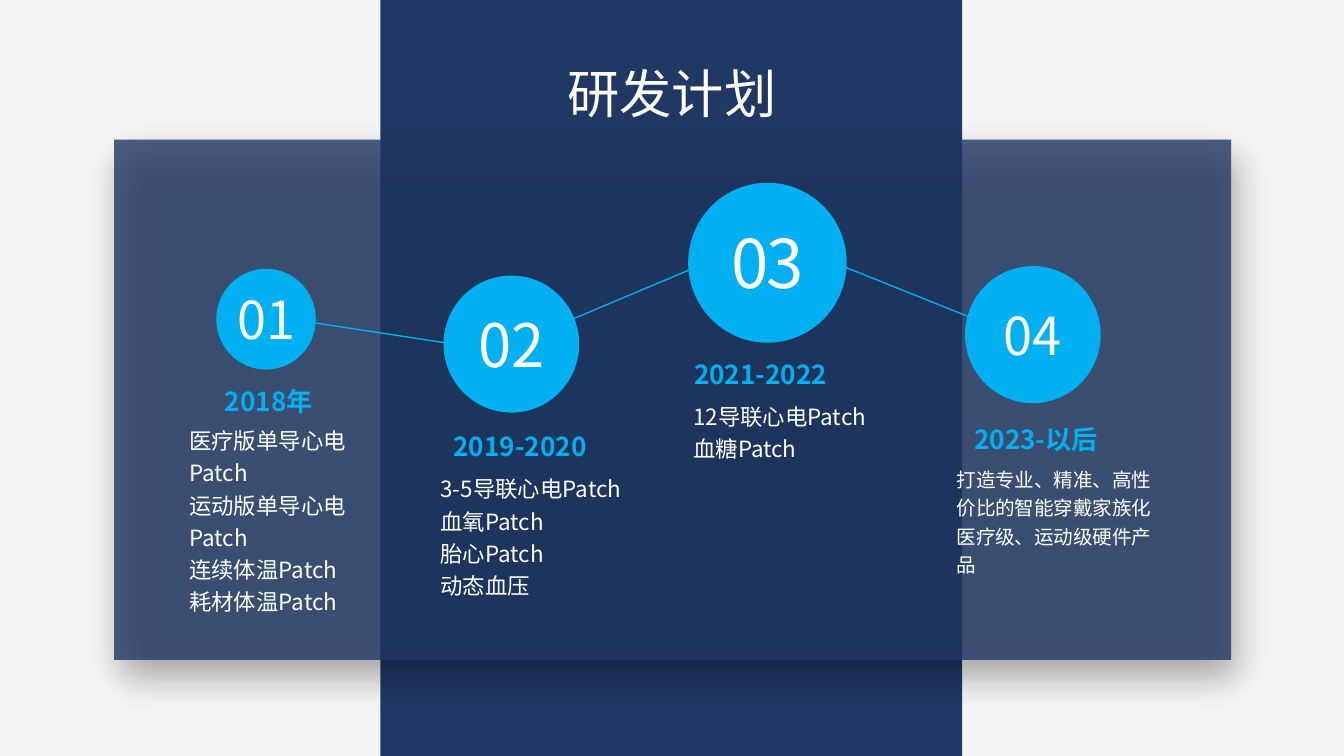
from dataclasses import dataclass
from itertools import pairwise

from lxml.etree import SubElement
from pptx import Presentation
from pptx.dml.color import RGBColor
from pptx.enum.shapes import MSO_CONNECTOR as Link, MSO_SHAPE as Kind
from pptx.enum.text import MSO_AUTO_SIZE as Fit, PP_ALIGN as Align
from pptx.oxml.ns import qn
from pptx.util import Inches, Pt

WIDE = 10
HIGH = WIDE * 9 / 16
FONT = "Noto Sans CJK SC"
HUES = {"page": "F5F5F5", "navy": "203864", "cyan": "00B0F0", "white": "FFFFFF"}


@dataclass
class Box:
    x: float
    y: float
    w: float
    h: float

    def dims(self) -> list:
        return [Inches(v) for v in (self.x, self.y, self.w, self.h)]


@dataclass
class Style:
    size: float
    hue: str = "white"
    bold: bool = False
    align: Align = Align.CENTER
    lead: float | None = None
    gap: float | None = None
    wrap: bool = True
    pad: float = 0.1


@dataclass
class Stop:
    num: str
    disc: Box
    area: tuple[float, float]
    size: float
    date: str
    head: tuple[float, float]
    body: Box
    lines: list[str]
    small: float = 12
    gap: float | None = None


STOPS = [
    Stop("01", Box(1.61, 2, 0.74, 0.75), (0.69, 0.57), 28, "2018年", (1.31, 2.82),
         Box(1.31, 3.09, 1.67, 1.53),
         ["医疗版单导心电Patch", "运动版单导心电Patch", "连续体温Patch", "耗材体温Patch"]),
    Stop("02", Box(3.3, 2.05, 1.01, 1.02), (0.96, 0.64), 32, "2019-2020", (3.18, 3.15),
         Box(3.18, 3.45, 1.67, 1.24),
         ["3-5导联心电Patch", "血氧Patch", "胎心Patch", "动态血压"]),
    Stop("03", Box(5.12, 1.36, 1.18, 1.19), (0.76, 0.71), 36, "2021-2022", (4.97, 2.62),
         Box(5.06, 2.91, 1.67, 0.57), ["12导联心电Patch", "血糖Patch"], gap=-1.1),
    Stop("04", Box(7.18, 1.98, 1.01, 1.02), (0.66, 0.57), 28, "2023-以后", (7.02, 3.1),
         Box(7.02, 3.4, 1.67, 0.93),
         ["打造专业、精准、高性价比的智能穿戴家族化医疗级、运动级硬件产品"], small=10.5),
]
NODES = [(1.87, 2.33), (3.7, 2.61), (5.72, 1.76), (7.69, 2.55)]


def tint(name: str) -> RGBColor:
    """Return the named colour."""
    return RGBColor.from_string(HUES[name])


def fade(node, part: int) -> None:
    """Set the opacity of a colour element in percent."""
    SubElement(node, qn("a:alpha"), val=str(part * 1000))


def shape(slide, kind: Kind, box: Box, hue: str):
    """Draw a flat filled shape."""
    item = slide.shapes.add_shape(kind, *box.dims())
    item.shadow.inherit = False
    item.fill.solid()
    item.fill.fore_color.rgb = tint(hue)
    item.line.fill.background()
    return item


def panel(slide, box: Box) -> None:
    """Draw the translucent panel with its soft shadow."""
    props = shape(slide, Kind.RECTANGLE, box, "navy")._element.spPr
    fade(props.find(".//" + qn("a:srgbClr")), 80)
    cast = SubElement(props.find(qn("a:effectLst")), qn("a:outerShdw"),
                      blurRad=str(Pt(20)), dist=str(Pt(10)), dir=str(70 * 60000),
                      algn="t", rotWithShape="0")
    fade(SubElement(cast, qn("a:srgbClr"), val="000000"), 40)


def link(slide, start: tuple, end: tuple) -> None:
    """Join two nodes with a thin line."""
    line = slide.shapes.add_connector(Link.STRAIGHT, *map(Inches, start + end))
    line.line.color.rgb = tint("cyan")
    line.line.width = Pt(0.75)
    SubElement(line._element.spPr, qn("a:effectLst"))


def write(slide, box: Box, lines: list[str], style: Style) -> None:
    """Add a text box with one run for each line."""
    frame = slide.shapes.add_textbox(*box.dims()).text_frame
    frame.word_wrap = style.wrap
    frame.auto_size = Fit.SHAPE_TO_FIT_TEXT
    frame.margin_left = frame.margin_right = Inches(style.pad)
    for i, text in enumerate(lines):
        para = frame.add_paragraph() if i else frame.paragraphs[0]
        para.alignment = style.align
        para.line_spacing = style.lead
        run = para.add_run()
        run.text = text
        font = run.font
        font.size, font.bold, font.name = Pt(style.size), style.bold, FONT
        font.color.rgb = tint(style.hue)
        props = run._r.get_or_add_rPr()
        SubElement(props, qn("a:ea"), typeface=FONT)
        if style.gap:
            props.set("spc", str(round(style.gap * 100)))


def number(slide, stop: Stop) -> None:
    """Draw a disc with its number centred on it."""
    disc, (w, h) = stop.disc, stop.area
    shape(slide, Kind.OVAL, disc, "cyan")
    box = Box(disc.x + (disc.w - w) / 2, disc.y + (disc.h - h) / 2, w, h)
    write(slide, box, [stop.num], Style(stop.size, gap=stop.gap, wrap=False))


def label(slide, stop: Stop) -> None:
    """Write the plans and the date of a stop."""
    write(slide, stop.body, stop.lines, Style(stop.small, align=Align.LEFT, lead=1.2))
    write(slide, Box(*stop.head, 1.38, 0.34), [stop.date], Style(14, "cyan", True))


def main() -> None:
    """Build the roadmap slide."""
    deck = Presentation()
    deck.slide_width, deck.slide_height = Inches(WIDE), Inches(HIGH)
    slide = deck.slides.add_slide(deck.slide_layouts[6])
    slide.background.fill.solid()
    slide.background.fill.fore_color.rgb = tint("page")
    shape(slide, Kind.RECTANGLE, Box(2.83, 0, 4.33, HIGH), "navy")
    panel(slide, Box(0.85, 1.04, 8.31, 3.87))
    for start, end in pairwise(NODES):
        link(slide, start, end)
    for stop in STOPS:
        number(slide, stop)
    write(slide, Box(2.43, 0.41, 5.14, 0.55), ["研发计划"], Style(28, pad=0))
    for stop in STOPS:
        label(slide, stop)
    deck.save("out.pptx")


if __name__ == "__main__":
    main()
